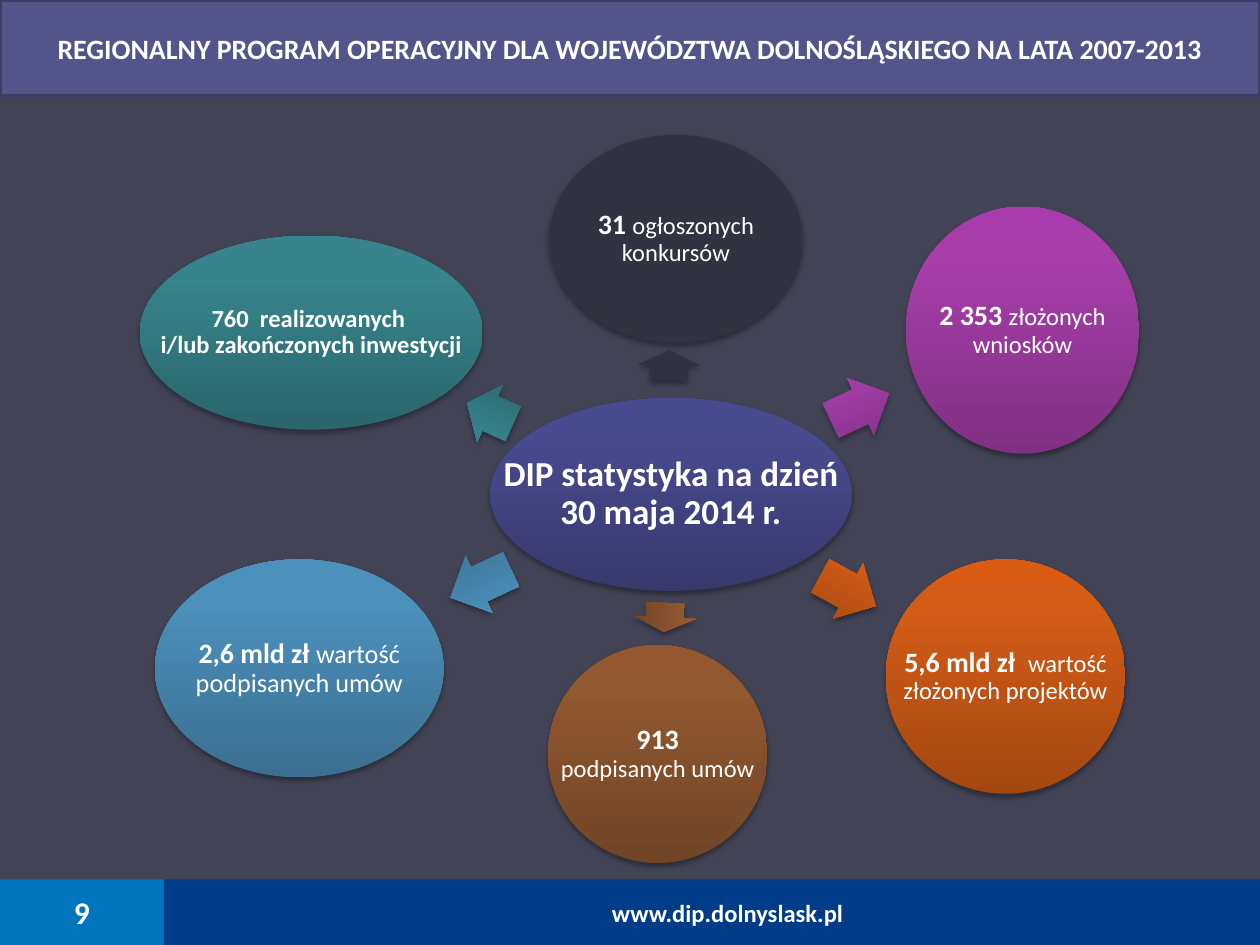
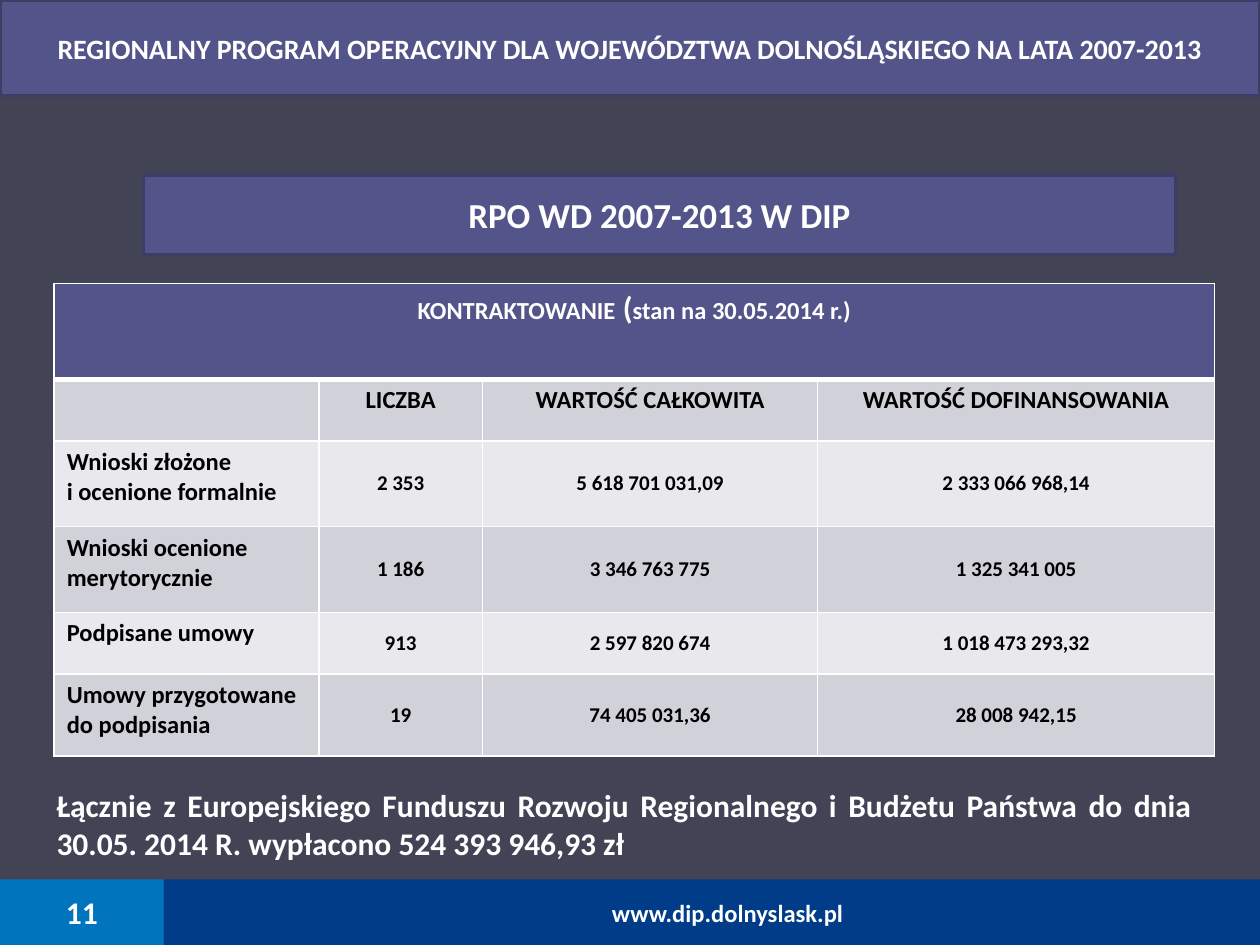
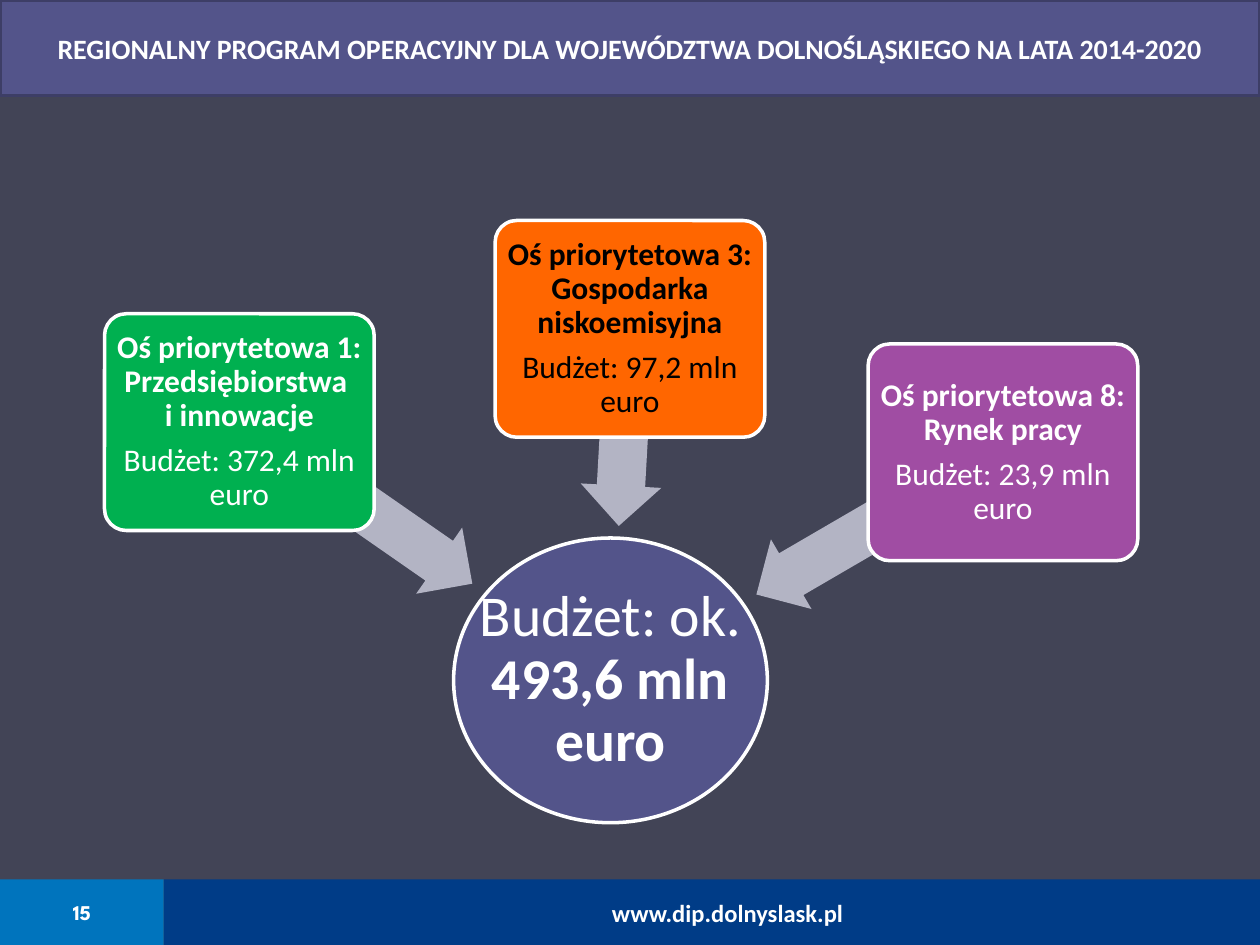
import copy
import pptx
import pptx.util
import pptx.dml.color
import pptx.enum.shapes
import pptx.enum.text
import pptx.oxml
import pptx.oxml.ns

Pt = pptx.util.Pt
RGB = pptx.dml.color.RGBColor
Kind = pptx.enum.shapes.MSO_SHAPE
Align = pptx.enum.text.PP_ALIGN
Anchor = pptx.enum.text.MSO_ANCHOR
NS = pptx.oxml.ns.nsdecls("a")

# Colours
NIGHT = RGB(0x42, 0x44, 0x56)
NAVY = RGB(0x00, 0x3C, 0x87)
AZURE = RGB(0x00, 0x74, 0xBD)
INDIGO = RGB(0x53, 0x54, 0x8A)
EDGE = RGB(0x3D, 0x3E, 0x66)
WHITE = RGB(0xFF, 0xFF, 0xFF)
BLACK = RGB(0x00, 0x00, 0x00)
COAL = RGB(0x32, 0x33, 0x41)
GREEN = RGB(0x00, 0xB0, 0x50)
ORANGE = RGB(0xFF, 0x66, 0x00)
PURPLE = RGB(0xA0, 0x4D, 0xA3)
SILVER = RGB(0xB3, 0xB4, 0xC4)
DARK = RGB(0xD1, 0xD1, 0xDA)
PALE = RGB(0xE9, 0xE9, 0xED)
# Gradients run from the bottom edge to the top edge
BLUES = RGB(0x38, 0x39, 0x6D), RGB(0x48, 0x4A, 0x8E), RGB(0x47, 0x49, 0x90)
PINKS = RGB(0x80, 0x30, 0x83), RGB(0xA7, 0x3E, 0xAA), RGB(0xA9, 0x3C, 0xAD)
RUSTS = RGB(0xA3, 0x47, 0x11), RGB(0xD4, 0x5C, 0x16), RGB(0xD9, 0x5C, 0x12)
BROWNS = RGB(0x70, 0x44, 0x25), RGB(0x92, 0x58, 0x30), RGB(0x95, 0x58, 0x2E)
SKIES = RGB(0x3B, 0x6F, 0x91), RGB(0x4C, 0x90, 0xBC), RGB(0x4A, 0x91, 0xBF)
TEALS = RGB(0x2A, 0x66, 0x6B), RGB(0x37, 0x84, 0x8C), RGB(0x36, 0x86, 0x8E)

# Slide size and a grid of square cells, 100 columns by 75 rows
deck = pptx.Presentation()
deck.slide_width = pptx.util.Inches(10)
deck.slide_height = pptx.util.Inches(7.5)
CELL = deck.slide_width / 100

# Formats
MID = {"word_wrap": True, "vertical_anchor": Anchor.MIDDLE}
SIDES = "margin_left", "margin_right", "margin_top", "margin_bottom"
TIGHT = {**MID, **dict.fromkeys(SIDES, Pt(1.5))}
OPEN = {"word_wrap": False, "vertical_anchor": Anchor.MIDDLE}
SITE = {**OPEN, "margin_left": int(3.9 * CELL), "margin_right": int(1.4 * CELL)}
HEAD = {**MID, "auto_size": pptx.enum.text.MSO_AUTO_SIZE.NONE}
CENTRE = {"alignment": Align.CENTER}
LABEL = {**CENTRE, "line_spacing": 0.9, "space_after": Pt(6.3)}
BAND = {"fill": INDIGO, "line": (EDGE, 2)}
ARROW = {"adj": (0.6, 0.5)}


def draw(page, kind, at, look):
    """Place a shape, the title or a text box on the grid."""
    spot = [int(part * CELL) for part in at]
    if kind == "title":
        item = page.shapes.title
        item.left, item.top, item.width, item.height = spot
    elif kind == "text":
        return page.shapes.add_textbox(*spot)
    else:
        item = page.shapes.add_shape(kind, *spot)
    item.rotation = look.get("turn", 0)
    for slot, size in enumerate(look.get("adj", ())):
        item.adjustments[slot] = size
    fill = look["fill"]
    if isinstance(fill, RGB):
        item.fill.solid()
        item.fill.fore_color.rgb = fill
    else:
        item.fill.gradient()
        item.fill.gradient_angle = 90
        last = item._element.spPr.findall(".//" + pptx.oxml.ns.qn("a:gs"))[-1]
        last.addnext(copy.deepcopy(last))
        for stop, tint, place in zip(item.fill.gradient_stops, fill, (0, 0.8, 1)):
            stop.color.rgb = tint
            stop.position = place
    if "line" in look:
        item.line.color.rgb = look["line"][0]
        item.line.width = Pt(look["line"][1])
    else:
        item.line.fill.background()
    item.shadow.inherit = False
    if look.get("shade"):
        item._element.spPr.find(pptx.oxml.ns.qn("a:effectLst")).append(pptx.oxml.parse_xml(
            f'<a:outerShdw {NS} blurRad="{Pt(3.1)}" dist="{Pt(1.8)}" dir="5400000" rotWithShape="0">'
            '<a:srgbClr val="000000"><a:alpha val="35000"/></a:srgbClr></a:outerShdw>'))
    return item


def write(frame, paras, body={}, para=CENTRE, ink=WHITE, face="Calibri"):
    """Fill a text frame; a paragraph is a list of (text, size, bold)."""
    for name, value in body.items():
        setattr(frame, name, value)
    for count, parts in enumerate(paras):
        block = frame.add_paragraph() if count else frame.paragraphs[0]
        for name, value in para.items():
            setattr(block, name, value)
        for words, size, bold in parts:
            for turn, line in enumerate(words.split("\n")):
                if turn:
                    block.add_line_break()
                if not line:
                    continue
                run = block.add_run()
                run.text = line
                form = {"name": face, "size": Pt(size), "bold": bold}
                for name, value in form.items():
                    setattr(run.font, name, value)
                run.font.color.rgb = ink
                if turn:
                    run._r.getprevious().append(copy.deepcopy(run._r.rPr))


# Shared background, title band and footer
deck.slide_master.background.fill.solid()
deck.slide_master.background.fill.fore_color.rgb = NIGHT
pages = []
for years, number, size, face in (
    ("2007-2013", "9", 18, "Calibri"),
    ("2007-2013", "11", 18, "Calibri"),
    ("2014-2020", "15", 12, "League Spartan"),
):
    page = deck.slides.add_slide(deck.slide_layouts[5])
    title = draw(page, "title", (0, 0, 100, 7.6), BAND)
    name = f"REGIONALNY PROGRAM OPERACYJNY DLA WOJEWÓDZTWA DOLNOŚLĄSKIEGO NA LATA {years}"
    write(title.text_frame, [[(name, 16, True)]], HEAD)
    site = draw(page, Kind.RECTANGLE, (13, 69.8, 87, 5.2), {"fill": NAVY})
    write(site.text_frame, [[("www.dip.dolnyslask.pl", 14, True)]], SITE)
    badge = draw(page, Kind.RECTANGLE, (0, 69.8, 13, 5.2), {"fill": AZURE})
    write(badge.text_frame, [[(number, size, True)]], OPEN, face=face)
    pages.append(page)
stats, money, axes = pages

# Slide 1: hub with six figures around it
hub = (38.9, 31.6, 28.7, 15.3)
draw(stats, Kind.OVAL, hub, {"fill": BLUES, "shade": True})
write(draw(stats, "text", hub, {}).text_frame,
      [[("DIP statystyka na dzień 30 maja 2014 r.", 20, True)]], TIGHT, LABEL)
for at, way, turn, fill, parts in (
    ((43.6, 10.7, 20.1, 16.5), (51.9, 26.5, 2.4, 5), 271.1, COAL,
     [("31 ", 16, True), ("ogłoszonych konkursów", 14, False)]),
    ((71.9, 16.4, 18.5, 19.6), (65.7, 29.8, 5.1, 5), 335, PINKS,
     [("2 353 ", 16, True), ("złożonych wniosków", 14, False)]),
    ((70.3, 44.4, 19, 18.6), (64.8, 44.4, 5, 5), 28.6, RUSTS,
     [("5,6 mld zł  ", 16, True), ("wartość złożonych projektów", 14, False)]),
    ((43.5, 51.2, 17.4, 17.3), (51.6, 46.5, 2.3, 5), 92.9, BROWNS,
     [("913", 16, True), ("\npodpisanych umów", 14, False)]),
    ((12.3, 44.4, 22.9, 17.3), (35.5, 43.8, 5.3, 5), 154.9, SKIES,
     [("2,6 mld zł ", 16, True), ("wartość podpisanych umów", 15, False)]),
    ((11.1, 18.7, 27.2, 15.4), (36.9, 30.3, 4, 5), 204.3, TEALS,
     [("760  realizowanych \ni/lub zakończonych inwestycji", 14, True)]),
):
    look = {"fill": fill, "shade": True}
    draw(stats, Kind.RIGHT_ARROW, way, {**look, **ARROW, "turn": turn})
    draw(stats, Kind.OVAL, at, look)
    write(draw(stats, "text", at, {}).text_frame, [parts], TIGHT, LABEL)

# Slide 2: contract table
rows = (
    ("", "LICZBA", "WARTOŚĆ CAŁKOWITA", "WARTOŚĆ DOFINANSOWANIA"),
    ("Wnioski złożone \ni ocenione formalnie", "2 353", "5 618 701 031,09", "2 333 066 968,14"),
    ("Wnioski ocenione merytorycznie", "1 186", "3 346 763 775", "1 325 341 005"),
    ("Podpisane umowy", "913", "2 597 820 674", "1 018 473 293,32"),
    ("Umowy przygotowane do podpisania", "19", "74 405 031,36", "28 008 942,15"),
)
spot = [int(part * CELL) for part in (4.3, 22.5, 92.1, 37.5)]
grid = money.shapes.add_table(len(rows) + 1, 4, *spot).table
grid.horz_banding = False
for col, wide in zip(grid.columns, (21, 13, 26.6, 31.5)):
    col.width = int(wide * CELL)
for row, high in zip(grid.rows, (7.6, 4.9, 6.8, 6.8, 4.9, 6.5)):
    row.height = int(high * CELL)
for r, row in enumerate(grid.rows):
    for c, cell in enumerate(row.cells):
        for side in "LRTB":
            thick = 3 if (r, side) in ((0, "B"), (1, "T")) else 1
            cell._tc.get_or_add_tcPr().append(pptx.oxml.parse_xml(
                f'<a:ln{side} {NS} w="{Pt(thick)}"><a:solidFill>'
                f'<a:srgbClr val="{WHITE}"/></a:solidFill></a:ln{side}>'))
        cell.fill.solid()
        cell.fill.fore_color.rgb = INDIGO if r == 0 else DARK if r % 2 else PALE
        if r == 0:
            continue
        value = r > 1 and c > 0
        if value:
            cell.vertical_anchor = Anchor.MIDDLE
            for side in SIDES:
                setattr(cell, side, Pt(0.5))
        para = {"alignment": Align.LEFT} if c == 0 else CENTRE
        write(cell.text_frame, [[(rows[r - 1][c], 12 if value else 14, True)]], para=para, ink=BLACK)
grid.cell(0, 0).merge(grid.cell(0, 3))
write(grid.cell(0, 0).text_frame,
      [[("KONTRAKTOWANIE", 14, True), (" (", 18, True), ("stan na 30.05.2014 r.)", 14, True)]])

# Slide 2: heading band and closing note
band = draw(money, Kind.RECTANGLE, (11.4, 13.9, 81.9, 6.3), BAND)
write(band.text_frame, [[("RPO WD 2007-2013 W DIP", 20, True)]], MID)
note = draw(money, "text", (3.5, 61.9, 92.1, 7.1), {})
write(note.text_frame,
      [[("Łącznie z Europejskiego Funduszu Rozwoju Regionalnego i Budżetu Państwa "
         "do dnia 30.05. 2014 R. wypłacono 524 393 946,93 zł", 18, True)]],
      {"word_wrap": True}, {"alignment": Align.JUSTIFY})

# Slide 3: three axes feeding one budget
RIM = {"line": (WHITE, 2)}
pool = (36, 42.7, 24.9, 22.6)
draw(axes, Kind.OVAL, pool, {"fill": INDIGO, **RIM})
write(draw(axes, "text", pool, {}).text_frame,
      [[("Budżet: ok. ", 33, False), ("493,6 mln euro", 33, True)]], TIGHT, LABEL)
for left, top, way, turn, fill, ink, name, sum_ in (
    (8.3, 24.9, (17, 36.7, 22.5, 6.4), 214.8, GREEN, WHITE,
     "1: Przedsiębiorstwa \ni innowacje", "372,4"),
    (39.3, 17.5, (41.7, 30.7, 15.7, 6.4), 273.2, ORANGE, BLACK,
     "3: Gospodarka niskoemisyjna", "97,2"),
    (68.9, 27.3, (58.5, 38.3, 22.6, 6.4), 329.8, PURPLE, WHITE,
     "8: Rynek pracy", "23,9"),
):
    draw(axes, Kind.LEFT_ARROW, way, {"fill": SILVER, **ARROW, "turn": turn})
    at = (left, top, 21.4, 17.2)
    draw(axes, Kind.ROUNDED_RECTANGLE, at, {"fill": fill, "adj": (0.1,), **RIM})
    write(draw(axes, "text", at, {}).text_frame,
          [[(f"Oś priorytetowa {name}", 18, True)], [(f"Budżet: {sum_} mln euro", 18, False)]],
          TIGHT, LABEL, ink)

deck.save("out.pptx")
